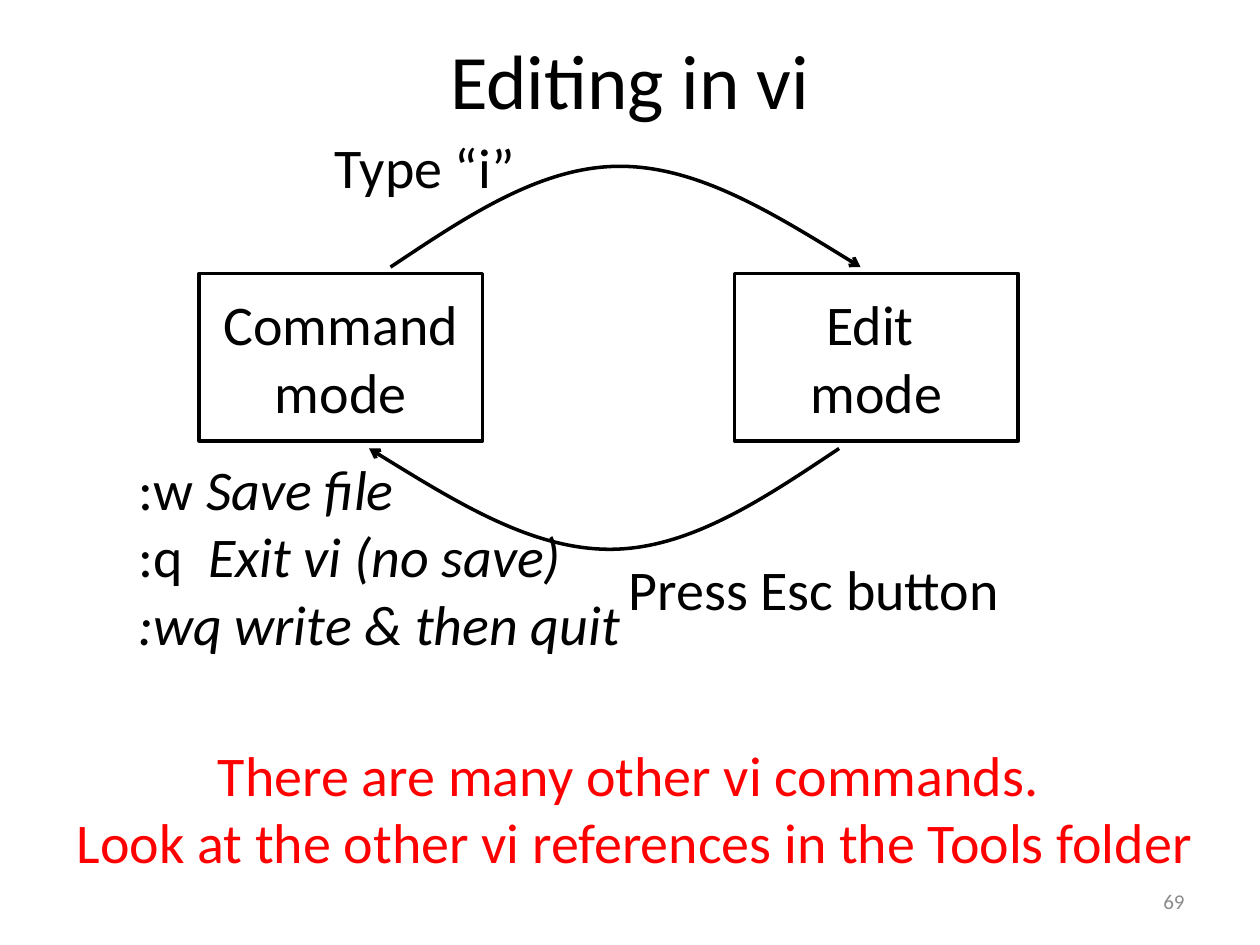
from lxml.etree import SubElement
from pptx import Presentation
from pptx.dml.color import RGBColor
from pptx.enum.shapes import MSO_SHAPE
from pptx.enum.text import MSO_ANCHOR, PP_ALIGN
from pptx.oxml.ns import qn
from pptx.util import Inches, Pt

BLACK, WHITE, RED, GRAY = "000000", "FFFFFF", "FF0000", "8C8C8C"
LEFT, CENTER, RIGHT = PP_ALIGN.LEFT, PP_ALIGN.CENTER, PP_ALIGN.RIGHT
TOP, MIDDLE = MSO_ANCHOR.TOP, MSO_ANCHOR.MIDDLE

MODES = [
    (1.58, [["Command mode"]]),
    (5.83, [["Edit "], ["mode"]]),
]
MODE_TOP, MODE_WIDTH, MODE_HEIGHT = 2.17, 2.25, 1.33

EDIT_ARROW = [(3.1, 2.12), (3.7, 1.72), (4.29, 1.32), (4.92, 1.32),
              (5.54, 1.32), (6.18, 1.72), (6.83, 2.12)]
TURN_X, TURN_Y = 9.76, 5.68

COMMANDS = [
    [":w ", ("Save file", {"italic": True})],
    [":q  ", ("Exit vi (no save)", {"italic": True})],
    [(":wq write & then quit", {"italic": True})],
]
CLOSING = "There are many other vi commands. \nLook at the other vi references in the Tools folder"

LABELS = [
    ((0.5, 0, 9, 1.25), [["Editing in vi"]], {"size": 44, "align": CENTER, "anchor": MIDDLE}),
    ((2.56, 1, 1.64, 0.64), [["Type “i”"]], {"wrap": False}),
    ((4.89, 4.35, 3.18, 0.64), [["Press Esc button"]], {"wrap": False}),
    ((1, 3.56, 4.07, 1.72), COMMANDS, {"wrap": False}),
    ((0.25, 5.83, 9.58, 1.18), [[CLOSING]], {"align": CENTER, "color": RED}),
    ((7.17, 6.95, 2.33, 0.4), [["69"]],
     {"size": 12, "align": RIGHT, "anchor": MIDDLE, "color": GRAY}),
]


def rgb(value):
    return RGBColor.from_string(value)


def write(shape, paragraphs, size=32, color=BLACK, align=LEFT, anchor=TOP, wrap=True):
    frame = shape.text_frame
    frame.word_wrap = wrap
    frame.vertical_anchor = anchor
    for index, spans in enumerate(paragraphs):
        para = frame.add_paragraph() if index else frame.paragraphs[0]
        para.alignment = align
        for item in spans:
            text, extra = item if isinstance(item, tuple) else (item, {})
            for number, line in enumerate(text.split("\n")):
                if number:
                    para.add_line_break()
                span = para.add_run()
                span.text = line
                span.font.color.rgb = rgb(color)
                for name, value in {"name": "Calibri", "size": Pt(size), **extra}.items():
                    setattr(span.font, name, value)


def outline(shape):
    shape.shadow.inherit = False
    shape.line.color.rgb = rgb(BLACK)
    shape.line.width = Pt(2)


def add_mode(page, left, paragraphs):
    box = page.shapes.add_shape(
        MSO_SHAPE.RECTANGLE,
        *map(Inches, (left, MODE_TOP, MODE_WIDTH, MODE_HEIGHT)))
    outline(box)
    box.fill.solid()
    box.fill.fore_color.rgb = rgb(WHITE)
    write(box, paragraphs, align=CENTER, anchor=MIDDLE)


def add_curved_arrow(page, points):
    start, *rest = [(Inches(x), Inches(y)) for x, y in points]
    builder = page.shapes.build_freeform(*start)
    builder.add_line_segments(rest, close=False)
    arrow = builder.convert_to_shape()
    outline(arrow)
    arrow.fill.background()
    SubElement(arrow.line._get_or_add_ln(), qn("a:tailEnd"), type="arrow")
    track = next(arrow._element.iter(qn("a:path")))
    segments = track.findall(qn("a:lnTo"))
    for first in range(0, len(segments), 3):
        curve = SubElement(track, qn("a:cubicBezTo"))
        for segment in segments[first:first + 3]:
            curve.append(segment[0])
            track.remove(segment)


def main():
    deck = Presentation()
    deck.slide_width, deck.slide_height = Inches(10), Inches(7.5)
    page = deck.slides.add_slide(deck.slide_layouts[6])
    for left, paragraphs in MODES:
        add_mode(page, left, paragraphs)
    add_curved_arrow(page, EDIT_ARROW)
    add_curved_arrow(page, [(TURN_X - x, TURN_Y - y) for x, y in EDIT_ARROW])
    for place, paragraphs, style in LABELS:
        write(page.shapes.add_textbox(*map(Inches, place)), paragraphs, **style)
    deck.save("out.pptx")


if __name__ == "__main__":
    main()
